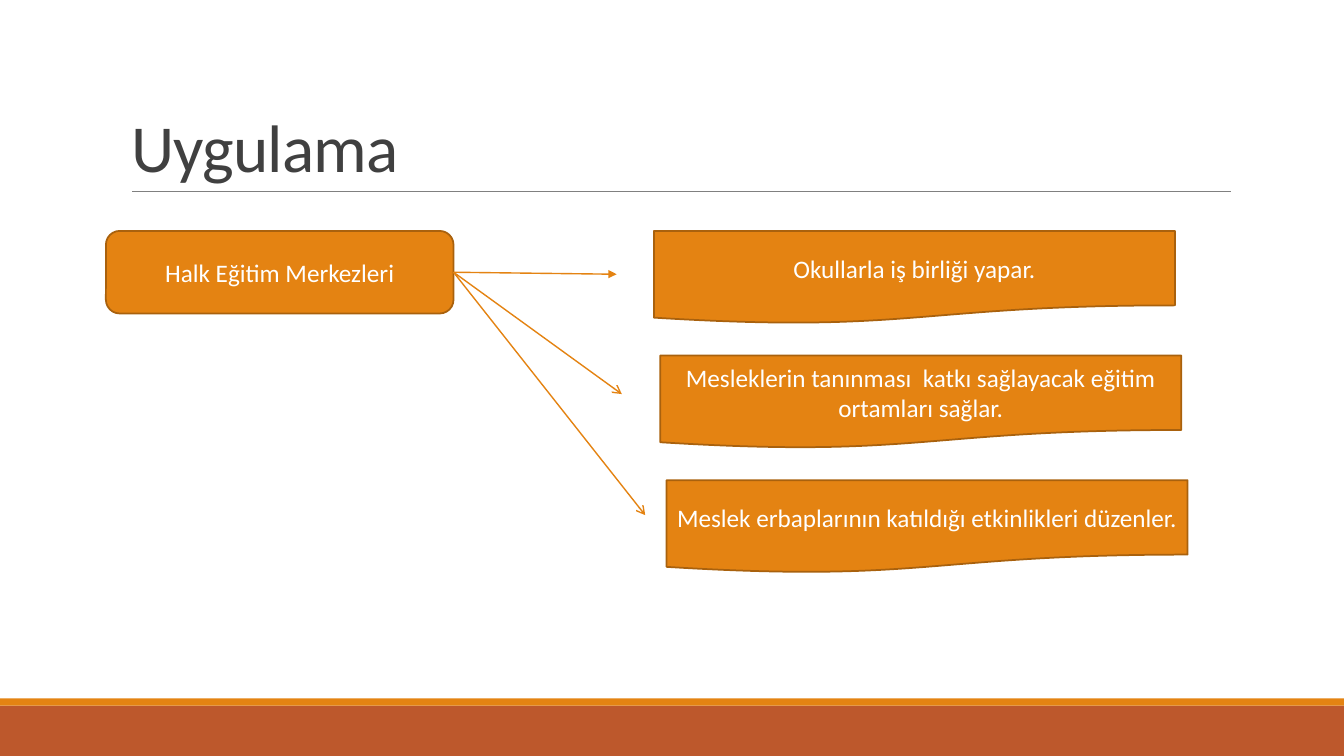
from lxml import etree
from pptx import Presentation
from pptx.dml.color import RGBColor
from pptx.enum.shapes import MSO_CONNECTOR, MSO_SHAPE
from pptx.enum.text import MSO_ANCHOR, PP_ALIGN
from pptx.oxml.ns import qn
from pptx.util import Cm, Pt

STRAIGHT = MSO_CONNECTOR.STRAIGHT
RECTANGLE = MSO_SHAPE.RECTANGLE
ROUNDED = MSO_SHAPE.ROUNDED_RECTANGLE
DOCUMENT = MSO_SHAPE.FLOWCHART_DOCUMENT
MIDDLE, BOTTOM = MSO_ANCHOR.MIDDLE, MSO_ANCHOR.BOTTOM
LEFT, CENTER = PP_ALIGN.LEFT, PP_ALIGN.CENTER

ORANGE = RGBColor(0xE4, 0x83, 0x12)
DARK_ORANGE = RGBColor(0xA9, 0x61, 0x0D)
RUST = RGBColor(0xBD, 0x58, 0x2C)
GRAY = RGBColor(0x80, 0x80, 0x80)
DARK_GRAY = RGBColor(0x40, 0x40, 0x40)
WHITE = RGBColor(0xFF, 0xFF, 0xFF)

FONT = "Calibri"
SLIDE_WIDTH, SLIDE_HEIGHT = 33.87, 19.05
RIGHT_SIDE = 3

# Each task: its text, the tip of its arrow and the arrowhead
TASKS = [
    ("Okullarla iş birliği yapar.", (15.54, 6.91), "triangle"),
    ("Mesleklerin tanınması  katkı sağlayacak eğitim ortamları sağlar.",
     (15.67, 9.93), "arrow"),
    ("Meslek erbaplarının katıldığı etkinlikleri düzenler.",
     (16.26, 12.98), "arrow"),
]
TASK_LEFT, TASK_TOP = 16.48, 5.82
TASK_STEP_X, TASK_STEP_Y = 0.16, 3.14


def add_span(para, text, size, color):
    span = para.add_run()
    span.text = text
    span.font.name = FONT
    span.font.size = Pt(size)
    span.font.color.rgb = color
    return span


def add_title(page, text):
    title = page.shapes.title
    title.left, title.top = Cm(3.05), Cm(0.79)
    title.width, title.height = Cm(27.94), Cm(4.04)
    title.text_frame.vertical_anchor = BOTTOM
    para = title.text_frame.paragraphs[0]
    para.alignment = LEFT
    para.line_spacing = 0.85
    span = add_span(para, text, 48, DARK_GRAY)
    span.font._element.set("spc", "-50")


def add_block(page, kind, left, top, width, height, fill):
    block = page.shapes.add_shape(kind, Cm(left), Cm(top), Cm(width), Cm(height))
    block.shadow.inherit = False
    block.fill.solid()
    block.fill.fore_color.rgb = fill
    block.line.fill.background()
    return block


def add_text_box(page, kind, left, top, width, height, text):
    """Add an outlined orange shape with centred white text."""
    box = add_block(page, kind, left, top, width, height, ORANGE)
    box.line.color.rgb = DARK_ORANGE
    box.line.width = Pt(1.25)
    box.text_frame.word_wrap = True
    box.text_frame.vertical_anchor = MIDDLE
    para = box.text_frame.paragraphs[0]
    para.alignment = CENTER
    add_span(para, text, 18, WHITE)
    return box


def add_line(page, start, end, color, width):
    line = page.shapes.add_connector(STRAIGHT, *map(Cm, start + end))
    line.line.color.rgb = color
    line.line.width = Pt(width)
    etree.SubElement(line._element.spPr, qn("a:effectLst"))
    return line


def add_arrow(page, source, tip, head):
    arrow = add_line(page, (11.43, 6.86), tip, ORANGE, 1)
    arrow.begin_connect(source, RIGHT_SIDE)
    etree.SubElement(arrow.line._get_or_add_ln(), qn("a:tailEnd"), type=head)


def main():
    deck = Presentation()
    deck.slide_width, deck.slide_height = Cm(SLIDE_WIDTH), Cm(SLIDE_HEIGHT)
    page = deck.slides.add_slide(deck.slide_layouts[5])

    add_block(page, RECTANGLE, 0, 17.78, SLIDE_WIDTH, 1.27, RUST)
    add_block(page, RECTANGLE, 0, 17.6, SLIDE_WIDTH, 0.18, ORANGE)
    add_line(page, (3.33, 4.83), (31.01, 4.83), GRAY, 0.5)
    add_title(page, "Uygulama")

    center = add_text_box(page, ROUNDED, 2.67, 5.82, 8.76, 2.08,
                          "Halk Eğitim Merkezleri")
    for index, (text, tip, head) in enumerate(TASKS):
        add_text_box(page, DOCUMENT, TASK_LEFT + index * TASK_STEP_X,
                     TASK_TOP + index * TASK_STEP_Y, 13.13, 2.34, text)
        add_arrow(page, center, tip, head)

    deck.save("out.pptx")


if __name__ == "__main__":
    main()
